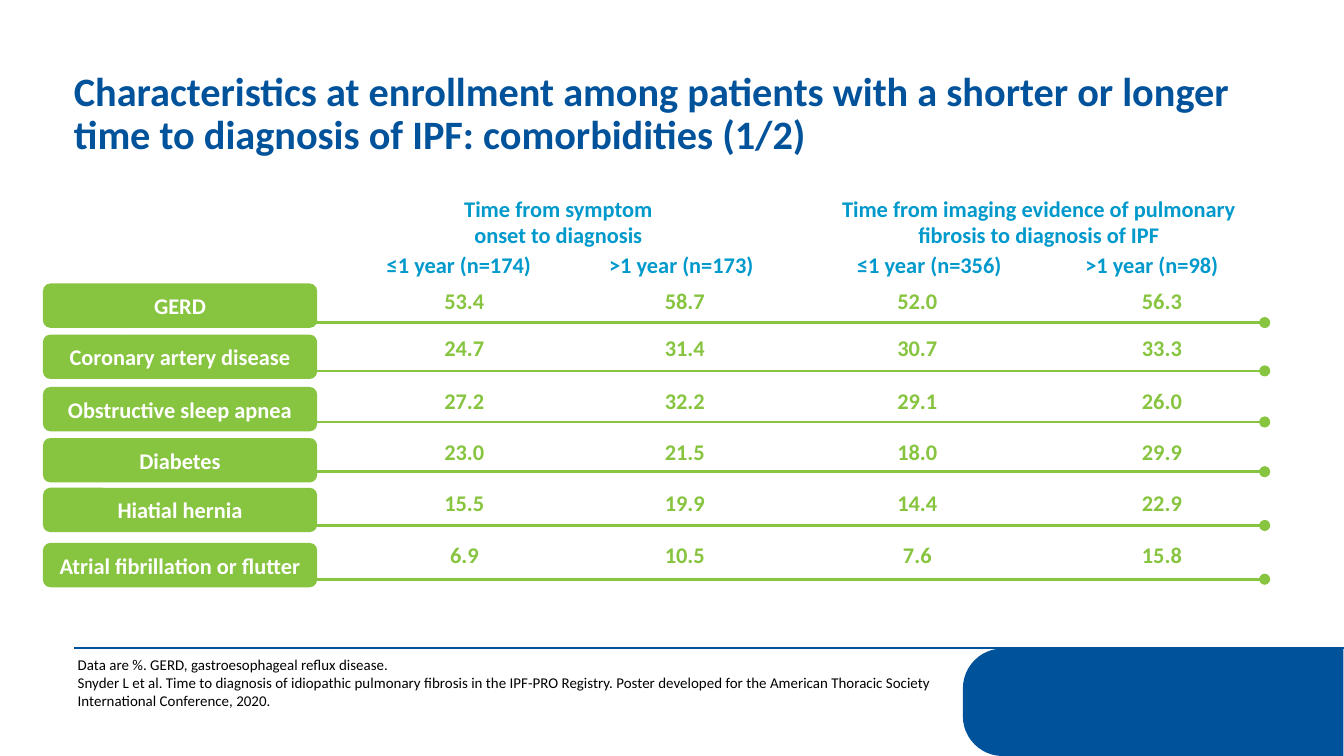
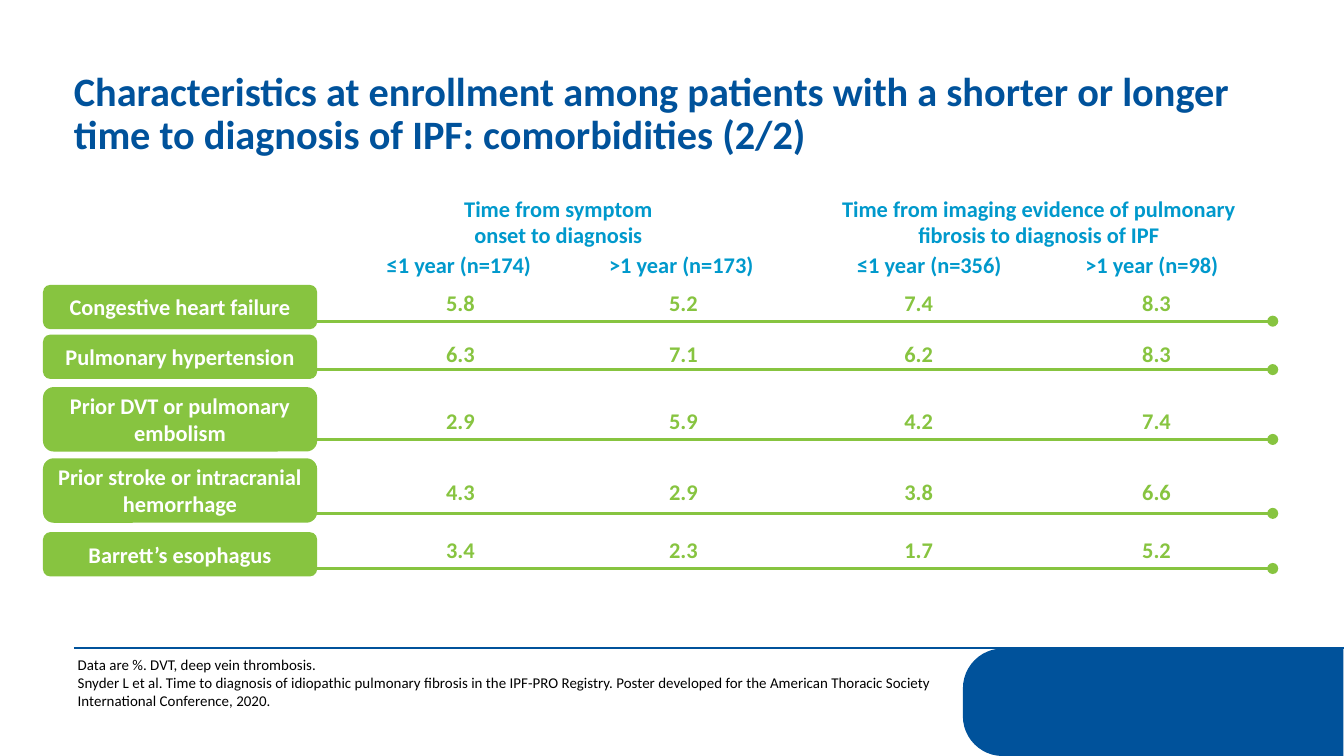
from pptx import Presentation, util as u
from pptx.dml.color import RGBColor
from pptx.enum import shapes, text
from pptx.oxml.ns import qn
from lxml import etree

# Square grid: ten columns across a 16:9 page
COLUMNS = 10
PAGE_WIDTH = u.Inches(10)
PAGE_HEIGHT = PAGE_WIDTH * 9 // 16
CELL = PAGE_WIDTH / COLUMNS

NAVY, SKY, GREEN = "00529B", "0099CC", "87C440"
WHITE, BLACK = "FFFFFF", "000000"
FONT = "Calibri"

TITLE = ("Characteristics at enrollment among patients with a shorter or longer "
         "time to diagnosis of IPF: comorbidities ({}/2)")
CITATION = ("Snyder L et al. Time to diagnosis of idiopathic pulmonary fibrosis in "
            "the IPF-PRO Registry. Poster developed for the American Thoracic "
            "Society International Conference, 2020.")

# Left, top, width, height and paragraphs of each column heading
HEADINGS = [
    (3.18, 1.4, 1.95, 0.5, ["Time from symptom", "onset to diagnosis"]),
    (6.04, 1.4, 3.38, 0.5,
     ["Time from imaging evidence of pulmonary fibrosis to diagnosis of IPF"]),
    (2.44, 1.82, 1.95, 0.3, ["≤1 year (n=174)"]),
    (3.93, 1.82, 2.28, 0.3, [">1 year (n=173)"]),
    (5.94, 1.82, 1.95, 0.3, ["≤1 year (n=356)"]),
    (7.43, 1.82, 2.28, 0.3, [">1 year (n=98)"]),
]
LABEL_LEFT, LABEL_WIDTH = 0.32, 2.04
ONE_LINE, TWO_LINES = 0.33, 0.48
VALUE_WIDTH, VALUE_HEIGHT = 1.91, 0.3

# Each row: label, label top, label height, value top, rule position, values
PAGES = [
    {
        "abbreviation": "Data are %. GERD, gastroesophageal reflux disease.",
        "rule": (0.91, 9.41),
        "value_lefts": (2.5, 4.14, 5.87, 7.69),
        "rows": [
            ("GERD", 2.11, ONE_LINE, 2.09, 2.4, "53.4 58.7 52.0 56.3"),
            ("Coronary artery disease", 2.49, ONE_LINE, 2.44, 2.76,
             "24.7 31.4 30.7 33.3"),
            ("Obstructive sleep apnea", 2.88, ONE_LINE, 2.83, 3.14,
             "27.2 32.2 29.1 26.0"),
            ("Diabetes", 3.26, ONE_LINE, 3.21, 3.51, "23.0 21.5 18.0 29.9"),
            ("Hiatial hernia", 3.63, ONE_LINE, 3.59, 3.91, "15.5 19.9 14.4 22.9"),
            ("Atrial fibrillation or flutter", 4.04, ONE_LINE, 3.98, 4.31,
             "6.9 10.5 7.6 15.8"),
        ],
    },
    {
        "abbreviation": "Data are %. DVT, deep vein thrombosis.",
        "rule": (0.96, 9.47),
        "value_lefts": (2.47, 4.13, 5.88, 7.65),
        "rows": [
            ("Congestive heart failure", 2.12, ONE_LINE, 2.1, 2.39,
             "5.8 5.2 7.4 8.3"),
            ("Pulmonary hypertension", 2.49, ONE_LINE, 2.48, 2.75,
             "6.3 7.1 6.2 8.3"),
            ("Prior DVT or pulmonary embolism", 2.88, TWO_LINES, 2.98, 3.27,
             "2.9 5.9 4.2 7.4"),
            ("Prior stroke or intracranial hemorrhage", 3.41, TWO_LINES, 3.51, 3.82,
             "4.3 2.9 3.8 6.6"),
            ("Barrett’s esophagus", 3.96, ONE_LINE, 3.94, 4.23, "3.4 2.3 1.7 5.2"),
        ],
    },
]


def cells(*counts):
    """Turn grid cells into slide lengths."""
    return [u.Emu(round(count * CELL)) for count in counts]


def apply(target, **values):
    for name, value in values.items():
        setattr(target, name, value)


def paint(color_format, color):
    color_format.rgb = RGBColor.from_string(color)


def write(frame, paragraphs, color, size=12, bold=True,
          align=text.PP_ALIGN.CENTER, **frame_values):
    apply(frame, word_wrap=True, **frame_values)
    for index, words in enumerate(paragraphs):
        para = frame.add_paragraph() if index else frame.paragraphs[0]
        para.alignment = align
        span = para.add_run()
        span.text = words
        apply(span.font, name=FONT, size=u.Pt(size), bold=bold)
        paint(span.font.color, color)


def add_text(page, area, paragraphs, color, **style):
    box = page.shapes.add_textbox(*cells(*area))
    write(box.text_frame, paragraphs, color,
          auto_size=text.MSO_AUTO_SIZE.SHAPE_TO_FIT_TEXT, **style)


def add_block(page, kind, area, color):
    block = page.shapes.add_shape(kind, *cells(*area))
    block.shadow.inherit = False
    block.fill.solid()
    paint(block.fill.fore_color, color)
    block.line.fill.background()
    return block


def add_rule(page, left, right, y, color, width, dots=False):
    rule = page.shapes.add_connector(
        shapes.MSO_CONNECTOR.STRAIGHT, *cells(left, y, right, y))
    rule.line.width = u.Pt(width)
    paint(rule.line.color, color)
    properties = rule._element.spPr
    if dots:
        outline = properties.find(qn("a:ln"))
        for end in ("a:headEnd", "a:tailEnd"):
            etree.SubElement(outline, qn(end), type="oval")
    etree.SubElement(properties, qn("a:effectLst"))


def add_frame(page, number, abbreviation):
    # Corner band and footer rule
    band = add_block(page, shapes.MSO_SHAPE.ROUND_2_SAME_RECTANGLE,
                     (8.18, 3.81, 0.8, 2.83), NAVY)
    band.rotation = 270
    band.adjustments[0] = 0.37
    add_rule(page, 0.55, COLUMNS, 4.82, NAVY, 1.25)

    # Title
    title = page.shapes.title
    places = cells(0.55, 0.48, 8.86, 0.74)
    apply(title, **dict(zip(("left", "top", "width", "height"), places)))
    write(title.text_frame, [TITLE.format(number)], NAVY, size=21.6,
          align=text.PP_ALIGN.LEFT, margin_left=0,
          auto_size=text.MSO_AUTO_SIZE.NONE,
          vertical_anchor=text.MSO_ANCHOR.TOP)
    title.text_frame.paragraphs[0].line_spacing = 0.9

    # Footnotes
    add_text(page, (0.48, 4.83, 6.68, 0.5), [abbreviation, CITATION], BLACK,
             size=8, bold=False, align=text.PP_ALIGN.LEFT)


def add_row(page, rule, value_lefts, row):
    name, top, height, value_top, rule_y, values = row
    add_rule(page, *rule, rule_y, GREEN, 1.5, dots=True)
    label = add_block(page, shapes.MSO_SHAPE.ROUNDED_RECTANGLE,
                      (LABEL_LEFT, top, LABEL_WIDTH, height), GREEN)
    write(label.text_frame, [name], WHITE, margin_left=0, margin_right=0,
          vertical_anchor=text.MSO_ANCHOR.MIDDLE)
    for left, value in zip(value_lefts, values.split()):
        add_text(page, (left, value_top, VALUE_WIDTH, VALUE_HEIGHT), [value], GREEN)


def main():
    deck = Presentation()
    apply(deck, slide_width=PAGE_WIDTH, slide_height=PAGE_HEIGHT)
    title_only = deck.slide_layouts.get_by_name("Title Only")
    for number, content in enumerate(PAGES, 1):
        page = deck.slides.add_slide(title_only)
        add_frame(page, number, content["abbreviation"])
        for *area, paragraphs in HEADINGS:
            add_text(page, area, paragraphs, SKY)
        for row in content["rows"]:
            add_row(page, content["rule"], content["value_lefts"], row)
    deck.save("out.pptx")


if __name__ == "__main__":
    main()
